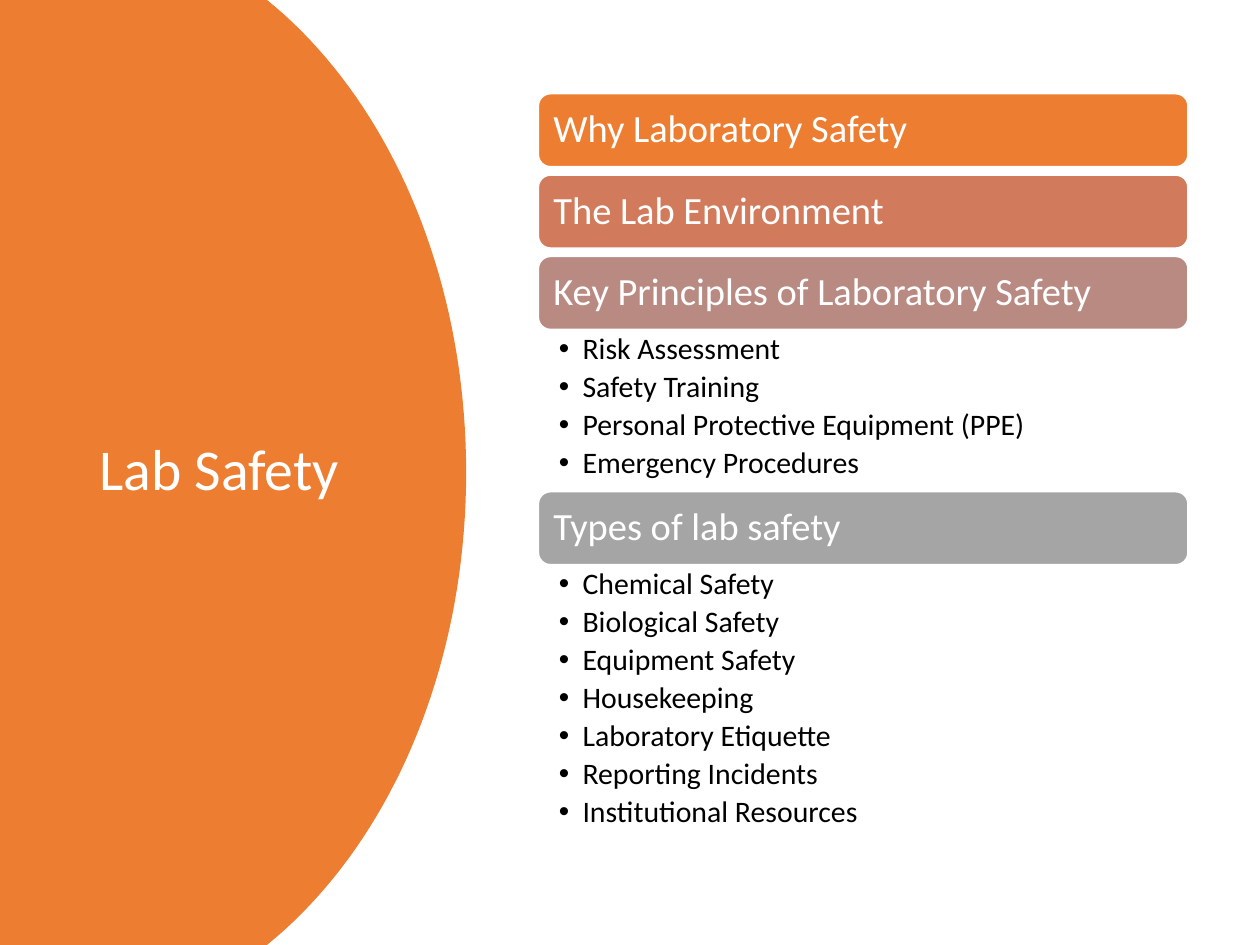
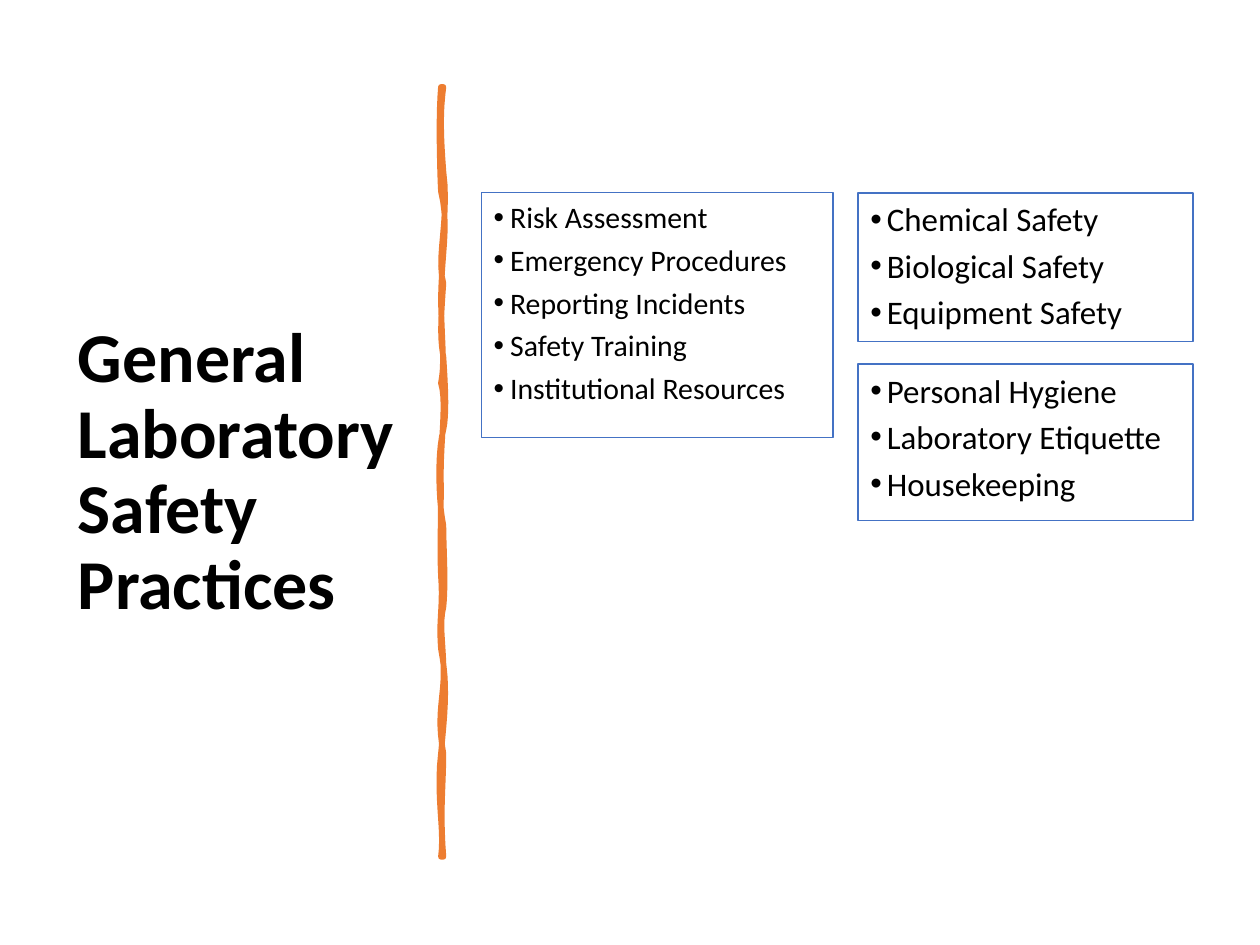
from lxml.etree import SubElement
from pptx import Presentation
from pptx.dml.color import RGBColor
from pptx.enum.shapes import MSO_SHAPE
from pptx.enum.text import MSO_ANCHOR, PP_ALIGN
from pptx.oxml.ns import qn
from pptx.util import Pt

ORANGE = RGBColor(0xED, 0x7D, 0x31)
CLAY = RGBColor(0xD1, 0x7B, 0x5C)
ROSE = RGBColor(0xB9, 0x8A, 0x82)
GRAY = RGBColor(0xA5, 0xA5, 0xA5)
BLUE = RGBColor(0x44, 0x72, 0xC4)
WHITE = RGBColor(0xFF, 0xFF, 0xFF)
BLACK = RGBColor(0, 0, 0)
FONT = "Calibri"
PAGE_WIDTH, PAGE_HEIGHT = 720, 540

AGENDA_TITLE = "Lab Safety"
AGENDA = [
    ("Why Laboratory Safety", ORANGE, []),
    ("The Lab Environment", CLAY, []),
    ("Key Principles of Laboratory Safety", ROSE, [
        "Risk Assessment", "Safety Training",
        "Personal Protective Equipment (PPE)", "Emergency Procedures"]),
    ("Types of lab safety", GRAY, [
        "Chemical Safety", "Biological Safety", "Equipment Safety", "Housekeeping",
        "Laboratory Etiquette", "Reporting Incidents", "Institutional Resources"]),
]

PRACTICES_TITLE = "General Laboratory Safety Practices"
PRACTICES = [
    ((275, 110.2, 201, 139.7), 17, [
        "Risk Assessment", "Emergency Procedures", "Reporting Incidents",
        "Safety Training", "Institutional Resources"]),
    ((490.3, 110.2, 191.5, 85), 18.8, [
        "Chemical Safety", "Biological Safety", "Equipment Safety"]),
    ((490.3, 208.1, 191.5, 89.3), 18.8, [
        "Personal Hygiene", "Laboratory Etiquette", "Housekeeping"]),
]

DISC_CURVES = [
    ((221, 55.4), (266.4, 155.5), (266.4, 270)),
    ((266.4, 384.5), (221, 484.6), (152.6, 540)),
]

STROKE_LEFT, STROKE_RIGHT = 252, 253.4
STROKE_TOP, STROKE_BOTTOM = 49.7, 489.6
STROKE_DOWN = [
    ((250.6, 67), (251.3, 94.3), 109.4),
    ((257, 128.9), (252, 146.2), 172.8),
    ((252.7, 198.7), (254.2, 207.4), 218.9),
    ((255.6, 230.4), (251.3, 252.7), 278.6),
    ((252, 302.4), (251.3, 313.2), 329),
    ((253.4, 347), (250.6, 352.8), 370.8),
    ((255.6, 389.5), (254.9, 401.8), 430.6),
    ((249.1, 455), (254.2, 474.5), STROKE_BOTTOM),
]
STROKE_UP = [
    ((251.3, 463), (253.4, 449.3), 430.6),
    ((249.8, 411.1), (252.7, 401.8), 388.8),
    ((254.2, 373.7), (250.6, 357.1), 347),
    ((254.9, 333.4), (253.4, 312.5), 300.2),
    ((250.6, 287.3), (249.8, 258.5), 245.5),
    ((255.6, 235.4), (254.2, 216.7), 203.8),
    ((251.3, 193.7), (252, 181.4), 162),
    ((249.1, 146.9), (257, 124.6), 97.9),
    ((251.3, 71.3), (252, 61.2), STROKE_TOP),
]


def curve_points(start, curves, steps):
    points = [start]
    for first, second, end in curves:
        begin = points[-1]
        for step in range(1, steps + 1):
            t = step / steps
            weights = ((1 - t) ** 3, 3 * t * (1 - t) ** 2, 3 * t * t * (1 - t), t ** 3)
            knots = (begin, first, second, end)
            points.append(tuple(
                sum(weight * knot[axis] for weight, knot in zip(weights, knots))
                for axis in (0, 1)))
    return points


def paint(shape, fill=None, line=None, width=1):
    shape.shadow.inherit = False
    for target, color in ((shape.fill, fill), (shape.line.fill, line)):
        if color is None:
            target.background()
        else:
            target.solid()
            target.fore_color.rgb = color
    if line is not None:
        shape.line.width = Pt(width)


def add_outline(page, points, **colors):
    corners = [(Pt(x), Pt(y)) for x, y in points]
    builder = page.shapes.build_freeform(*corners[0])
    builder.add_line_segments(corners[1:], close=True)
    paint(builder.convert_to_shape(), **colors)


def add_bullet(para, indent):
    properties = para._p.get_or_add_pPr()
    properties.set("marL", str(Pt(indent)))
    properties.set("indent", str(-Pt(indent)))
    SubElement(properties, qn("a:buFont"), typeface="Arial")
    SubElement(properties, qn("a:buChar"), char="•")


def write(shape, lines, size, color=BLACK, bold=False, anchor=MSO_ANCHOR.TOP,
          insets=(7.2, 3.6), indent=0, spacing=0.9, before=0, after=0):
    frame = shape.text_frame
    side, edge = map(Pt, insets)
    layout = {"word_wrap": True, "vertical_anchor": anchor, "margin_left": side,
              "margin_right": side, "margin_top": edge, "margin_bottom": edge}
    for name, value in layout.items():
        setattr(frame, name, value)
    for index, line in enumerate(lines):
        para = frame.add_paragraph() if index else frame.paragraphs[0]
        if indent:
            add_bullet(para, indent)
        para.alignment = PP_ALIGN.LEFT
        para.line_spacing = spacing
        para.space_before = Pt(before if index else 0)
        para.space_after = Pt(after)
        span = para.add_run()
        span.text = line
        span.font.color.rgb = color
        for name, value in {"name": FONT, "size": Pt(size), "bold": bold}.items():
            setattr(span.font, name, value)


def add_text(page, place, lines, size, **style):
    write(page.shapes.add_textbox(*map(Pt, place)), lines, size, **style)


def add_title(page, place, text, size, **style):
    add_text(page, place, [text], size, anchor=MSO_ANCHOR.MIDDLE, **style)


def build_agenda(page):
    disc = [(0, 0), *curve_points((152.6, 0), DISC_CURVES, 40), (0, PAGE_HEIGHT)]
    add_outline(page, disc, fill=ORANGE)
    add_title(page, (49.7, 50.4, 174.2, 438.5), AGENDA_TITLE, 33, color=WHITE)
    left, top, width = 307.6, 53.5, 371.3
    bar_height, gap, item_height = 41.8, 4.7, 23.15
    for heading, color, items in AGENDA:
        bar = page.shapes.add_shape(
            MSO_SHAPE.ROUNDED_RECTANGLE, *map(Pt, (left, top, width, bar_height)))
        paint(bar, fill=color, line=WHITE)
        write(bar, [heading], 22, color=WHITE, anchor=MSO_ANCHOR.MIDDLE, insets=(6.6, 4))
        top += bar_height
        if items:
            height = item_height * len(items)
            add_text(page, (left, top, width, height), items, 17,
                     insets=(11.8, 2.2), indent=13.5, after=3.4)
            top += height
        else:
            top += gap


def build_practices(page):
    add_title(page, (37.4, 50.4, 202.3, 439.9), PRACTICES_TITLE, 40, bold=True)
    edges = []
    for x, start, bends in ((STROKE_LEFT, STROKE_TOP, STROKE_DOWN),
                            (STROKE_RIGHT, STROKE_BOTTOM, STROKE_UP)):
        curves = [(first, second, (x, y)) for first, second, y in bends]
        edges += curve_points((x, start), curves, 10)
    add_outline(page, edges, fill=ORANGE, line=ORANGE, width=3.25)
    for place, size, items in PRACTICES:
        box = page.shapes.add_shape(MSO_SHAPE.RECTANGLE, *map(Pt, place))
        paint(box, line=BLUE, width=0.75)
        write(box, items, size, indent=9.4, spacing=1.0, before=4)


def main():
    deck = Presentation()
    deck.slide_width, deck.slide_height = Pt(PAGE_WIDTH), Pt(PAGE_HEIGHT)
    for build in (build_agenda, build_practices):
        build(deck.slides.add_slide(deck.slide_layouts[6]))
    deck.save("out.pptx")


if __name__ == "__main__":
    main()
